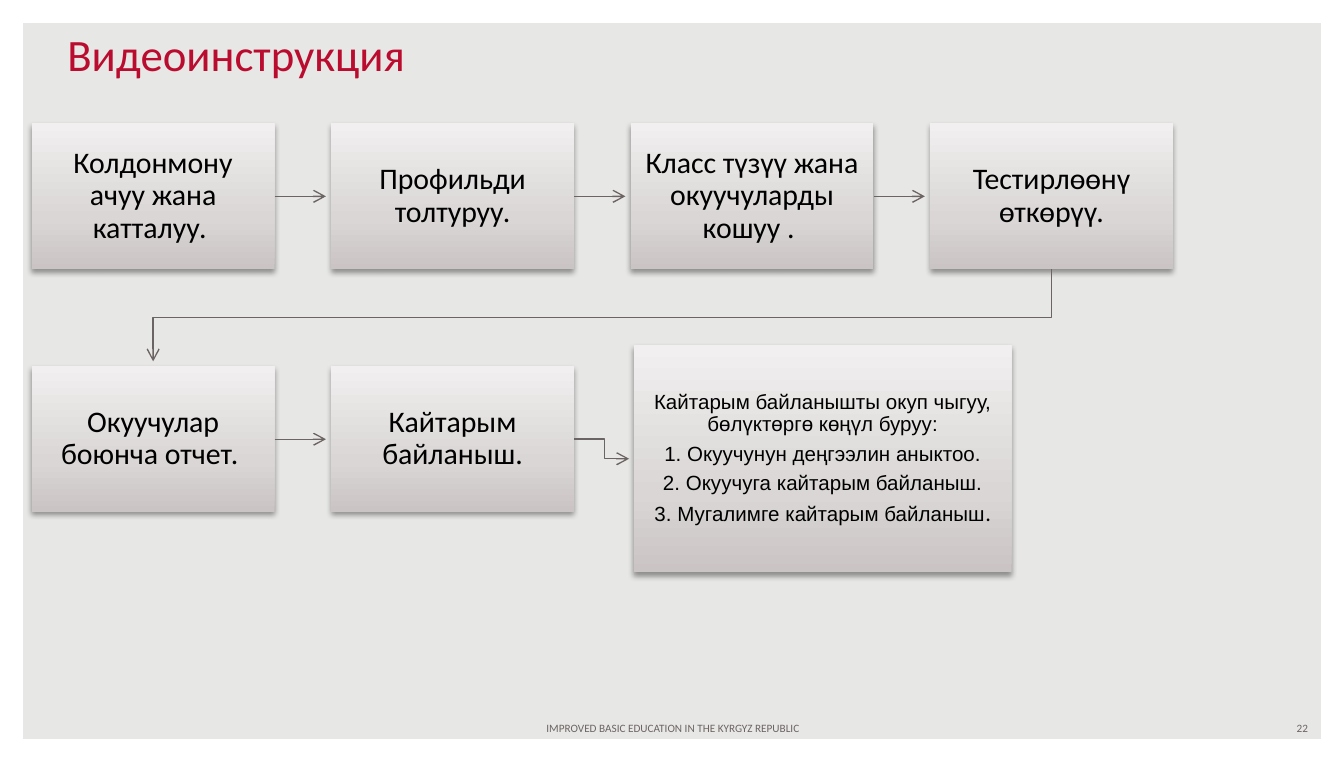
"""Build the video instruction slide: a seven-step process flow."""
from copy import deepcopy

from lxml import etree
from pptx import Presentation
from pptx import util as u
from pptx.dml.color import RGBColor
from pptx.enum import shapes, text
from pptx.oxml import ns

RED, GREY, BLACK, WHITE, PAPER = "BA0C2F", "6C6463", "000000", "FFFFFF", "E7E7E5"
GRADIENT = [(0, "CAC4C4"), (0.35, "D9D6D5"), (1, "F1EFEF")]
BOX_W, BOX_H, LEFT, STEP = 4.59, 2.76, 0.6, 5.66
ROWS = [
    (2.33, ["Колдонмону ачуу жана катталуу. ", "Профильди толтуруу.",
            "Класс түзүү жана окуучуларды кошуу . ", "Тестирлөөнү өткөрүү."]),
    (6.92, ["Окуучулар боюнча отчет. ", "Кайтарым байланыш."]),
]
FEEDBACK = "\n".join([
    "Кайтарым байланышты окуп чыгуу, бөлүктөргө көңүл буруу:",
    "1. Окуучунун деңгээлин аныктоо.",
    "2. Окуучуга кайтарым байланыш.",
    "3. Мугалимге кайтарым байланыш",
])


def rgb(value):
    return RGBColor.from_string(value)


def add_xml(parent, tag, **attrs):
    return etree.SubElement(parent, ns.qn(tag), attrs)


class Deck:
    def __init__(self):
        self.prs = Presentation()
        self.prs.slide_width, self.prs.slide_height = u.Cm(25.4), u.Cm(14.4)
        self.s = self.prs.slides.add_slide(self.prs.slide_layouts[5])
        fill = self.s.background.fill
        fill.solid()
        fill.fore_color.rgb = rgb(PAPER)

    def font(self, r, size, color, name="Calibri"):
        r.font.size, r.font.name = u.Pt(size), name
        r.font.color.rgb = rgb(color)

    def set_text(self, tf, words, size, color, align, name="Calibri"):
        tf.text = words
        tf.word_wrap = True
        for p in tf.paragraphs:
            p.alignment = align
            for r in p.runs:
                self.font(r, size, color, name)

    def frame(self):
        sp = self.s.shapes.add_shape(shapes.MSO_SHAPE.FRAME, 0, 0,
                                     self.prs.slide_width, self.prs.slide_height)
        sp.adjustments[0] = 0.03
        sp.shadow.inherit = False
        sp.fill.solid()
        sp.fill.fore_color.rgb = rgb(WHITE)
        sp.line.fill.background()

    def title(self, words):
        sp = self.s.shapes.title
        sp.left, sp.top, sp.width, sp.height = map(u.Cm, (1.02, 0.38, 21.6, 1.27))
        self.set_text(sp.text_frame, words, 24, RED, text.PP_ALIGN.LEFT)
        sp.text_frame.auto_size = text.MSO_AUTO_SIZE.NONE
        sp.text_frame.vertical_anchor = text.MSO_ANCHOR.BOTTOM

    def footer(self, words, left, width, align):
        sp = self.s.shapes.add_textbox(*map(u.Cm, (left, 13.51, width, 0.51)))
        self.set_text(sp.text_frame, words, 6, GREY, align)
        sp.text_frame.vertical_anchor = text.MSO_ANCHOR.MIDDLE

    def box(self, words, left, top, width=BOX_W, height=BOX_H, size=16, name="Calibri"):
        sp = self.s.shapes.add_shape(shapes.MSO_SHAPE.RECTANGLE,
                                     *map(u.Cm, (left, top, width, height)))
        sp.line.fill.background()
        sp.fill.gradient()
        sp.fill.gradient_angle = 90
        stops = sp._element.spPr.find(".//" + ns.qn("a:gsLst"))
        stops.append(deepcopy(stops[0]))
        for stop, (position, color) in zip(sp.fill.gradient_stops, GRADIENT):
            stop.position, stop.color.rgb = position, rgb(color)
        sp.shadow.inherit = False
        effects = sp._element.spPr.find(ns.qn("a:effectLst"))
        shadow = add_xml(effects, "a:outerShdw", blurRad="40000", dist="20000",
                         dir="5400000", rotWithShape="0")
        add_xml(add_xml(shadow, "a:srgbClr", val=BLACK), "a:alpha", val="38000")
        tf = sp.text_frame
        tf.margin_left = tf.margin_right = tf.margin_top = tf.margin_bottom = u.Cm(0.23)
        tf.vertical_anchor = text.MSO_ANCHOR.MIDDLE
        self.set_text(tf, words, size, BLACK, text.PP_ALIGN.CENTER, name)
        for p in tf.paragraphs:
            p.line_spacing, p.space_after = 0.9, u.Pt(size * 0.35)
        return tf

    def arrow(self, *points):
        points = [(u.Cm(x), u.Cm(y)) for x, y in points]
        if len(points) == 2:
            sp = self.s.shapes.add_connector(shapes.MSO_CONNECTOR.STRAIGHT,
                                             *points[0], *points[1])
        else:
            outline = self.s.shapes.build_freeform(*points[0])
            outline.add_line_segments(points[1:], close=False)
            sp = outline.convert_to_shape()
            sp.fill.background()
        sp.line.width = u.Pt(0.75)
        sp.line.fill.solid()
        sp.line.fill.fore_color.rgb = rgb(GREY)
        add_xml(sp.line._get_or_add_ln(), "a:tailEnd", type="arrow")
        add_xml(sp._element.spPr, "a:effectLst")


def main():
    d = Deck()
    d.frame()
    d.title("Видеоинструкция")
    d.footer("IMPROVED BASIC EDUCATION IN THE KYRGYZ REPUBLIC", 8.69, 8.05,
             text.PP_ALIGN.CENTER)
    d.footer("22", 19.05, 5.92, text.PP_ALIGN.RIGHT)
    for top, steps in ROWS:
        middle = top + BOX_H / 2
        for i, words in enumerate(steps):
            left = LEFT + i * STEP
            d.box(words, left, top)
            if i < len(steps) - 1:
                d.arrow((left + BOX_W, middle), (left + STEP - 0.1, middle))
    first, last = LEFT + BOX_W / 2, LEFT + 3 * STEP + BOX_W / 2
    d.arrow((last, 5.09), (last, 6), (first, 6), (first, 6.83))
    d.arrow((10.85, 8.3), (11.42, 8.3), (11.42, 8.67), (11.89, 8.67))
    tf = d.box(FEEDBACK, 11.98, 6.53, 7.14, 4.29, 11, "Arial")
    r = tf.paragraphs[-1].add_run()
    r.text = "."
    d.font(r, 12, BLACK)
    d.prs.save("out.pptx")


if __name__ == "__main__":
    main()
